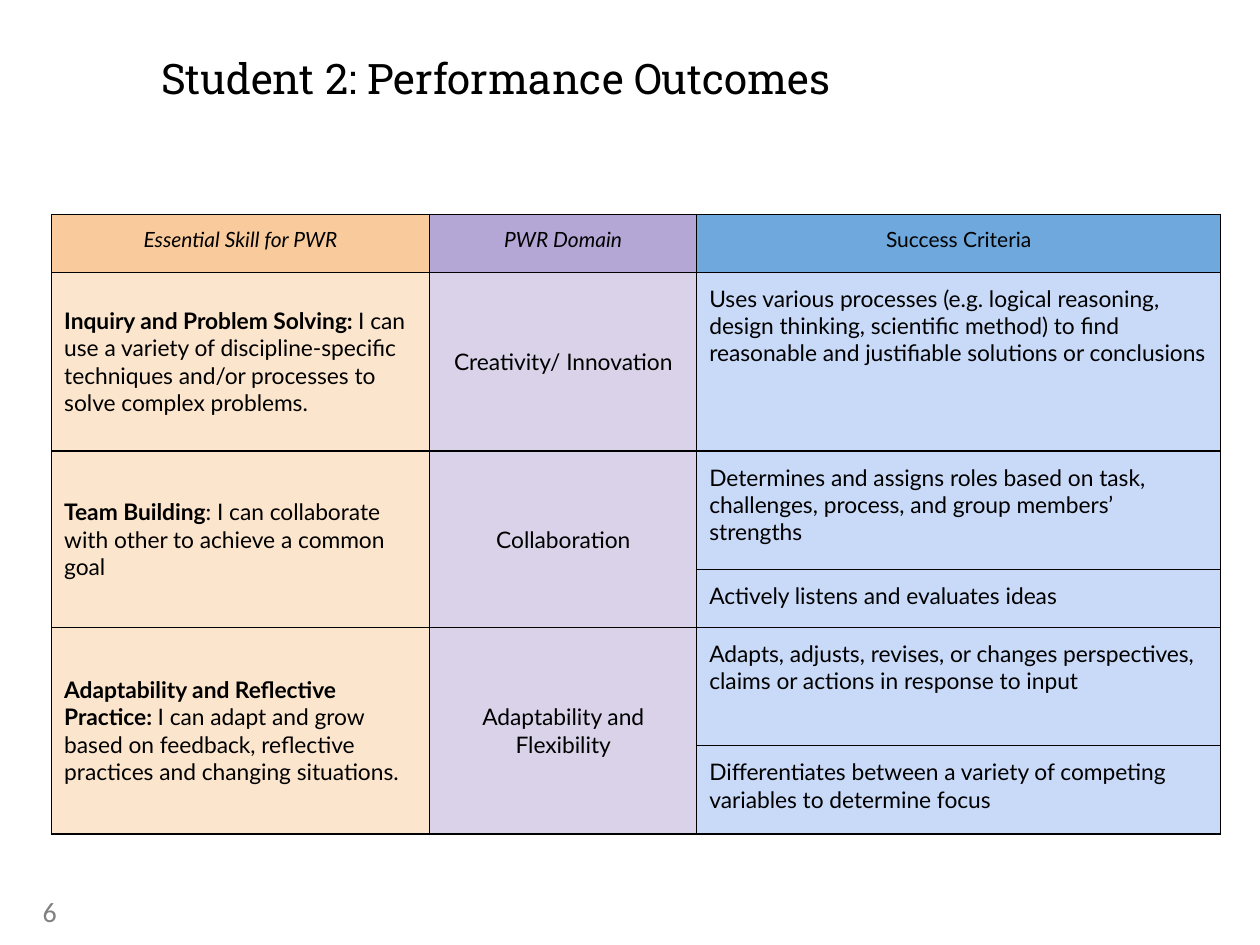
from pptx import Presentation
from pptx.dml.color import RGBColor
from pptx.enum.text import MSO_ANCHOR, PP_ALIGN
from pptx.oxml import parse_xml
from pptx.oxml.ns import nsdecls
from pptx.util import Inches, Pt

HUES = {
    "ink": "000000", "gray": "808080",
    "orange": "F9CB9C", "purple": "B4A7D6", "blue": "6FA8DC",
    "peach": "FCE5CD", "lilac": "D9D2E9", "sky": "C9DAF8",
}
HEADS = ["Essential Skill for PWR", "PWR Domain", "Success Criteria"]
# Each skill: bold lead, statement, domain, success criteria
SKILLS = [
    ("Inquiry and Problem Solving: ",
     "I can use a variety of discipline-specific techniques and/or processes "
     "to solve complex problems.",
     "Creativity/ Innovation",
     ["Uses various processes (e.g. logical reasoning, design thinking, "
      "scientific method) to find reasonable and justifiable solutions or "
      "conclusions"]),
    ("Team Building",
     ": I can collaborate with other to achieve a common goal",
     "Collaboration",
     ["Determines and assigns roles based on task, challenges, process, and "
      "group members’ strengths",
      "Actively listens and evaluates ideas"]),
    ("Adaptability and Reflective Practice: ",
     "I can adapt and grow based on feedback, reflective practices and "
     "changing situations.",
     "Adaptability and Flexibility",
     ["Adapts, adjusts, revises, or changes perspectives, claims or actions "
      "in response to input",
      "Differentiates between a variety of competing variables to determine "
      "focus"]),
]
COLS = [3, 2.12, 4.16]
ROWS = [0.46, 1.42, 0.94, 0.46, 0.94, 0.7]


def style(run, face, size, hue="ink"):
    run.font.name = face
    run.font.size = Pt(size)
    run.font.color.rgb = RGBColor.from_string(HUES[hue])


def dress(cell, hue):
    """Give a table cell its fill, padding and thin dark borders."""
    cell.margin_left = cell.margin_right = Inches(0.1)
    cell.margin_top = cell.margin_bottom = Inches(0.1)
    props = cell._tc.get_or_add_tcPr()
    for side in ("lnL", "lnR", "lnT", "lnB"):
        props.append(parse_xml(
            f'<a:{side} {nsdecls("a")} w="{Pt(0.75)}"><a:solidFill>'
            f'<a:srgbClr val="{HUES["ink"]}"/></a:solidFill></a:{side}>'))
    cell.fill.solid()
    cell.fill.fore_color.rgb = RGBColor.from_string(HUES[hue])


deck = Presentation()
deck.slide_width, deck.slide_height = Inches(10), Inches(7.5)
slide = deck.slides.add_slide(deck.slide_layouts[6])

# Title
frame = slide.shapes.add_textbox(
    Inches(1.28), Inches(0.46), Inches(5.64), Inches(0.65)).text_frame
frame.word_wrap = True
frame.margin_left = frame.margin_right = 0
frame.margin_top = frame.margin_bottom = 0
frame.text = "Student 2: Performance Outcomes"
frame.paragraphs[0].line_spacing = 0.9
style(frame.paragraphs[0].runs[0], "Roboto Slab", 24)

# Slide number
frame = slide.shapes.add_textbox(
    Inches(0.24), Inches(7.03), Inches(2.25), Inches(0.4)).text_frame
frame.word_wrap = True
frame.vertical_anchor = MSO_ANCHOR.MIDDLE
frame.text = "6"
style(frame.paragraphs[0].runs[0], "Calibri", 16, "gray")

# Outcomes table
table = slide.shapes.add_table(
    len(ROWS), len(COLS), Inches(0.41), Inches(1.7),
    Inches(sum(COLS)), Inches(sum(ROWS))).table
for col, wide in zip(table.columns, COLS):
    col.width = Inches(wide)
for row, high in zip(table.rows, ROWS):
    row.height = Inches(high)
for r in range(len(ROWS)):
    hues = ("peach", "lilac", "sky") if r else ("orange", "purple", "blue")
    for c, hue in enumerate(hues):
        dress(table.cell(r, c), hue)

for c, head in enumerate(HEADS):
    cell = table.cell(0, c)
    cell.text = head
    para = cell.text_frame.paragraphs[0]
    para.alignment = PP_ALIGN.CENTER
    style(para.runs[0], "Lato", 12)
    para.runs[0].font.italic = c < 2

top = 1
for lead, claim, domain, goals in SKILLS:
    skill, field = table.cell(top, 0), table.cell(top, 1)
    for c, cell in enumerate((skill, field)):
        if len(goals) > 1:
            cell.merge(table.cell(top + len(goals) - 1, c))
        cell.vertical_anchor = MSO_ANCHOR.MIDDLE
    skill.text = lead
    para = skill.text_frame.paragraphs[0]
    para.add_run().text = claim
    para.runs[0].font.bold = True
    field.text = domain
    field.text_frame.paragraphs[0].alignment = PP_ALIGN.CENTER
    spots = [skill, field]
    for r, goal in enumerate(goals, top):
        cell = table.cell(r, 2)
        cell.text = goal
        spots.append(cell)
    for cell in spots:
        for run in cell.text_frame.paragraphs[0].runs:
            style(run, "Lato", 13)
    top += len(goals)

deck.save("out.pptx")
